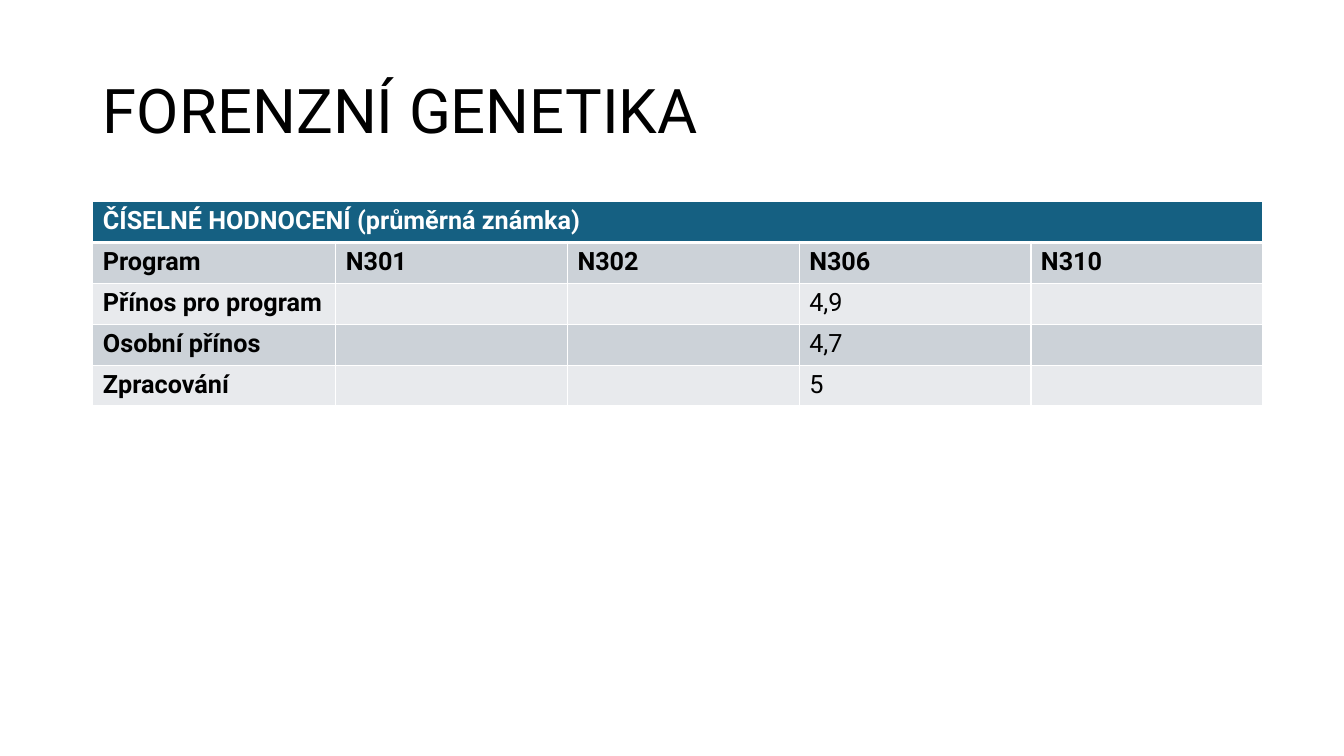
from dataclasses import dataclass

from lxml import etree
from pptx import Presentation
from pptx.dml.color import RGBColor
from pptx.enum import text as t
from pptx.oxml import ns
from pptx.util import Cm, Pt

BLACK = RGBColor(0x00, 0x00, 0x00)
WHITE = RGBColor(0xFF, 0xFF, 0xFF)
TEAL = RGBColor(0x15, 0x60, 0x82)
DARK = RGBColor(0xCC, 0xD2, 0xD8)
LIGHT = RGBColor(0xE8, 0xEA, 0xED)
FONT = "Roboto"
COLS = [6.12] + [5.84] * 4
ROW_H = 1.03


@dataclass
class Row:
    cells: list[str]
    fill: RGBColor
    color: RGBColor = BLACK
    head: bool = False
    top: float = 1
    base: float = 1


ROWS = [
    Row(["ČÍSELNÉ HODNOCENÍ (průměrná známka)", "", "", "", ""],
        TEAL, WHITE, head=True, base=3),
    Row(["Program", "N301", "N302", "N306", "N310"], DARK, head=True, top=3),
    Row(["Přínos pro program", "", "", "4,9", ""], LIGHT),
    Row(["Osobní přínos", "", "", "4,7", ""], DARK),
    Row(["Zpracování", "", "", "5", ""], LIGHT),
]


def add_run(para, words: str, size: float, color: RGBColor, bold: bool) -> None:
    run = para.add_run()
    run.text = words
    font = run.font
    font.name, font.size, font.bold = FONT, Pt(size), bold
    font.color.rgb = color


def add_edge(cell, side: str, width: float) -> None:
    props = cell._tc.get_or_add_tcPr()
    line = etree.SubElement(props, ns.qn(f"a:ln{side}"), w=str(Pt(width)))
    fill = etree.SubElement(line, ns.qn("a:solidFill"))
    etree.SubElement(fill, ns.qn("a:srgbClr"), val=str(WHITE))


def draw_cell(cell, words: str, row: Row, bold: bool) -> None:
    # Borders come before the fill in the cell properties
    for side, width in zip("LRTB", (1, 1, row.top, row.base)):
        add_edge(cell, side, width)
    cell.fill.solid()
    cell.fill.fore_color.rgb = row.fill
    if words:
        add_run(cell.text_frame.paragraphs[0], words, 18, row.color, bold)


def draw_title(slide, words: str) -> None:
    title = slide.shapes.title
    title.left, title.top = Cm(2.34), Cm(1.01)
    title.width, title.height = Cm(29.21), Cm(3.68)
    frame = title.text_frame
    frame.auto_size = t.MSO_AUTO_SIZE.NONE
    frame.vertical_anchor = t.MSO_ANCHOR.MIDDLE
    para = frame.paragraphs[0]
    para.alignment = t.PP_ALIGN.LEFT
    para.line_spacing = 0.9
    add_run(para, words, 44, BLACK, False)


def draw_table(slide) -> None:
    table = slide.shapes.add_table(
        len(ROWS), len(COLS), Cm(2.34), Cm(5.08),
        Cm(sum(COLS)), Cm(ROW_H * len(ROWS))).table
    for col, width in zip(table.columns, COLS):
        col.width = Cm(width)
    for i, row in enumerate(ROWS):
        table.rows[i].height = Cm(ROW_H)
        for j, words in enumerate(row.cells):
            draw_cell(table.cell(i, j), words, row, row.head or j == 0)
    # The heading spans every column
    table.cell(0, 0).merge(table.cell(0, len(COLS) - 1))


def main() -> None:
    deck = Presentation()
    deck.slide_width, deck.slide_height = Cm(33.87), Cm(19.05)
    slide = deck.slides.add_slide(deck.slide_layouts[5])
    draw_title(slide, "FORENZNÍ GENETIKA")
    draw_table(slide)
    deck.save("out.pptx")


if __name__ == "__main__":
    main()
